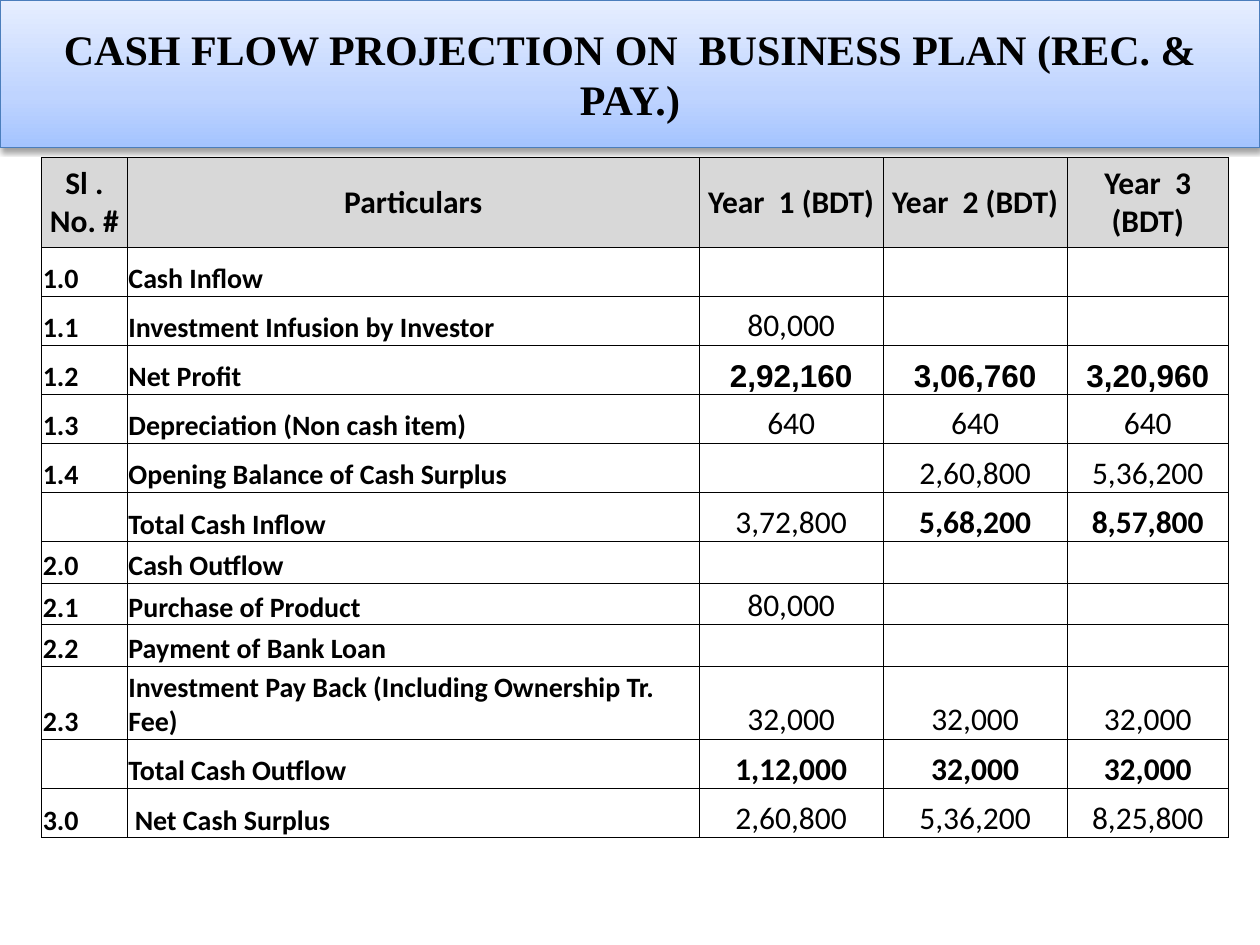
import copy

import lxml.etree
import pptx
import pptx.dml.color
import pptx.enum.text
import pptx.oxml
import pptx.oxml.ns
import pptx.util

Inches = pptx.util.Inches
Pt = pptx.util.Pt
ALIGN = pptx.enum.text.PP_ALIGN
ANCHOR = pptx.enum.text.MSO_ANCHOR
qn = pptx.oxml.ns.qn
NAMESPACE = pptx.oxml.ns.nsdecls("a")


def color(hex_string):
    return pptx.dml.color.RGBColor.from_string(hex_string)


def write(text_frame, text, size=16, font="Calibri", bold=True, align=ALIGN.LEFT):
    paragraph = text_frame.paragraphs[0]
    paragraph.alignment = align
    run = paragraph.add_run()
    run.text = text
    run.font.size = Pt(size)
    run.font.name = font
    run.font.bold = bold
    run.font.color.rgb = color("000000")


presentation = pptx.Presentation()
presentation.slide_width = Inches(10)
presentation.slide_height = Inches(7.5)
slide = presentation.slides.add_slide(presentation.slide_layouts[5])

# Title banner
title = slide.shapes.title
title.left, title.top = Inches(0), Inches(0)
title.width, title.height = Inches(10), Inches(1.17)
title.text_frame.word_wrap = True
title.text_frame.auto_size = pptx.enum.text.MSO_AUTO_SIZE.NONE
title.text_frame.vertical_anchor = ANCHOR.MIDDLE
write(title.text_frame, "CASH FLOW PROJECTION ON  BUSINESS PLAN (REC. & PAY.)",
      size=24, font="Times New Roman", align=ALIGN.CENTER)

title.fill.gradient()
title.fill.gradient_angle = 90
properties = title.element.spPr
stop_list = properties.find(".//" + qn("a:gsLst"))
stop_list.append(copy.deepcopy(stop_list[-1]))
banner_stops = [(0, "A4C4FF"), (0.35, "BFD4FF"), (1, "E6EEFF")]
for stop, (position, shade) in zip(title.fill.gradient_stops, banner_stops):
    stop.position = position
    stop.color.rgb = color(shade)
title.line.color.rgb = color("4B7EBC")
title.line.width = Pt(0.75)
properties.append(pptx.oxml.parse_xml(
    f'<a:effectLst {NAMESPACE}><a:outerShdw blurRad="{Pt(3.1)}" dist="{Pt(1.6)}" '
    'dir="5400000" rotWithShape="0"><a:srgbClr val="000000"><a:alpha val="38000"/>'
    '</a:srgbClr></a:outerShdw></a:effectLst>'))

# Cash flow table: row height, cells
rows = [
    (0.71, "Sl . No. #", "Particulars", "Year  1 (BDT)", "Year  2 (BDT)", "Year  3 (BDT)"),
    (0.39, "1.0", "Cash Inflow", "", "", ""),
    (0.39, "1.1", "Investment Infusion by Investor", "80,000", "", ""),
    (0.39, "1.2", "Net Profit", "2,92,160", "3,06,760", "3,20,960"),
    (0.39, "1.3", "Depreciation (Non cash item)", "640", "640", "640"),
    (0.39, "1.4", "Opening Balance of Cash Surplus", "", "2,60,800", "5,36,200"),
    (0.39, "", "Total Cash Inflow", "3,72,800", "5,68,200", "8,57,800"),
    (0.33, "2.0", "Cash Outflow", "", "", ""),
    (0.33, "2.1", "Purchase of Product", "80,000", "", ""),
    (0.33, "2.2", "Payment of Bank Loan", "", "", ""),
    (0.58, "2.3", "Investment Pay Back (Including Ownership Tr. Fee)",
     "32,000", "32,000", "32,000"),
    (0.39, "", "Total Cash Outflow", "1,12,000", "32,000", "32,000"),
    (0.39, "3.0", " Net Cash Surplus", "2,60,800", "5,36,200", "8,25,800"),
]
column_widths = [0.68, 4.54, 1.46, 1.46, 1.28]
bold_value_columns = {"Net Profit": (2, 3, 4), "Total Cash Inflow": (3, 4),
                      "Total Cash Outflow": (2, 3, 4)}

table = slide.shapes.add_table(
    len(rows), len(column_widths), Inches(0.33), Inches(1.25),
    Inches(sum(column_widths)), Inches(sum(row[0] for row in rows))).table
table.first_row = False
table.horz_banding = False
for column, width in zip(table.columns, column_widths):
    column.width = Inches(width)

for row_index, (height, *texts) in enumerate(rows):
    table.rows[row_index].height = Inches(height)
    is_header = row_index == 0
    label = texts[1]
    for column_index, text in enumerate(texts):
        cell = table.cell(row_index, column_index)
        cell.margin_left = cell.margin_right = cell.margin_top = Inches(0.01)
        cell.margin_bottom = 0
        cell.vertical_anchor = ANCHOR.MIDDLE if is_header else ANCHOR.BOTTOM
        cell_properties = cell._tc.get_or_add_tcPr()
        for side in ("lnL", "lnR", "lnT", "lnB"):
            border = lxml.etree.SubElement(cell_properties, qn(f"a:{side}"), w=str(Pt(0.5)))
            border_fill = lxml.etree.SubElement(border, qn("a:solidFill"))
            lxml.etree.SubElement(border_fill, qn("a:srgbClr"), val="000000")
        cell.fill.solid()
        cell.fill.fore_color.rgb = color("D8D8D8" if is_header else "FFFFFF")
        if not text:
            continue
        is_value = column_index >= 2
        write(cell.text_frame, text,
              size=18 if is_header or is_value else 16,
              font="Arial" if is_value and label == "Net Profit" else "Calibri",
              bold=(is_header or not is_value
                    or column_index in bold_value_columns.get(label, ())),
              align=ALIGN.CENTER if is_header or is_value else ALIGN.LEFT)

presentation.save("out.pptx")
